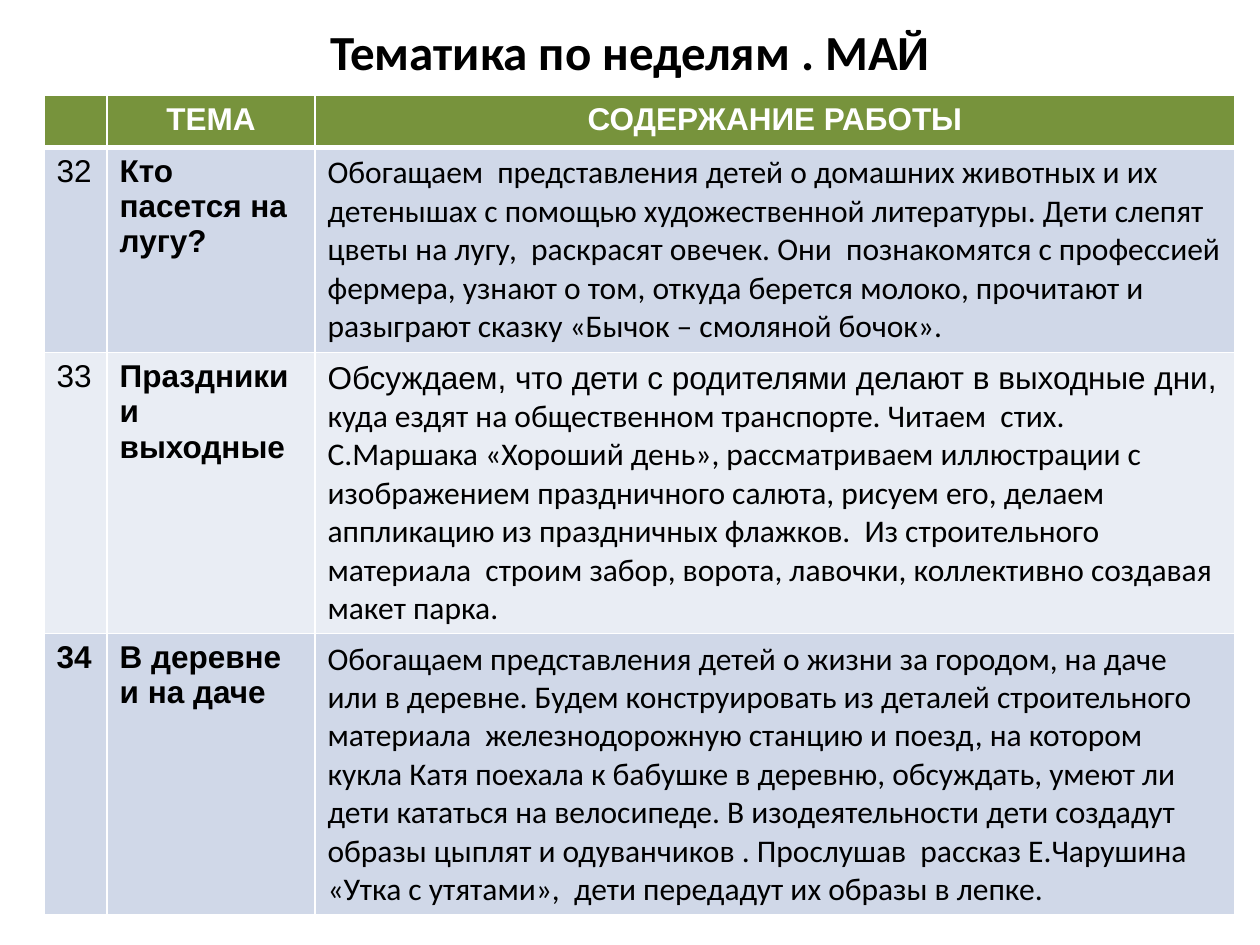
from dataclasses import dataclass

from lxml import etree
from pptx import Presentation
from pptx.dml.color import RGBColor
from pptx.enum.text import MSO_ANCHOR, PP_ALIGN
from pptx.oxml.ns import qn
from pptx.util import Inches, Pt

CENTER, LEFT = PP_ALIGN.CENTER, PP_ALIGN.LEFT
MIDDLE = MSO_ANCHOR.MIDDLE
BLANK_LAYOUT = 6


@dataclass(frozen=True)
class Theme:
    heading_font: str = "Calibri"
    label_font: str = "Arial"
    title_size: int = 28
    table_size: int = 18
    text: str = "000000"
    header_text: str = "FFFFFF"
    header_fill: str = "77933C"
    bands: tuple = ("D0D8E8", "E9EDF4")
    border: str = "FFFFFF"
    border_width: int = 1
    header_rule: int = 3


class SlideBuilder:
    def __init__(self, slide, theme):
        self.slide = slide
        self.theme = theme

    def format_span(self, span, size, font, color, bold):
        span.font.size = Pt(size)
        span.font.name = font
        span.font.bold = bold
        span.font.color.rgb = RGBColor.from_string(color)

    def title(self, text, left, top, width, height):
        box = self.slide.shapes.add_textbox(
            Inches(left), Inches(top), Inches(width), Inches(height))
        frame = box.text_frame
        frame.word_wrap = True
        frame.vertical_anchor = MIDDLE
        frame.text = text
        para = frame.paragraphs[0]
        para.alignment = CENTER
        self.format_span(para.runs[0], self.theme.title_size,
                         self.theme.heading_font, self.theme.text, True)

    def borders(self, cell, top, bottom):
        properties = cell._tc.get_or_add_tcPr()
        side = self.theme.border_width
        for tag, width in (("lnL", side), ("lnR", side),
                           ("lnT", top), ("lnB", bottom)):
            line = etree.SubElement(properties, qn(f"a:{tag}"), w=str(Pt(width)))
            fill = etree.SubElement(line, qn("a:solidFill"))
            etree.SubElement(fill, qn("a:srgbClr"), val=self.theme.border)

    def cell(self, cell, spans, fill, color, align=LEFT, top=1, bottom=1):
        """Fill a cell with spans given as (text, font, bold)."""
        self.borders(cell, top, bottom)
        cell.fill.solid()
        cell.fill.fore_color.rgb = RGBColor.from_string(fill)
        para = cell.text_frame.paragraphs[0]
        para.alignment = align
        for text, font, bold in spans:
            span = para.add_run()
            span.text = text
            self.format_span(span, self.theme.table_size, font, color, bold)

    def table(self, header, weeks, left, top, widths, heights):
        theme = self.theme
        table = self.slide.shapes.add_table(
            len(heights), len(widths), Inches(left), Inches(top),
            Inches(sum(widths)), Inches(sum(heights))).table
        for column, width in zip(table.columns, widths):
            column.width = Inches(width)
        for row, height in zip(table.rows, heights):
            row.height = Inches(height)

        # Header row
        for index, label in enumerate(header):
            spans = [(label, theme.label_font, True)] if label else []
            self.cell(table.cell(0, index), spans, theme.header_fill,
                      theme.header_text, CENTER, bottom=theme.header_rule)

        # One banded row per week
        for index, (number, number_bold, topic, lead, body) in enumerate(weeks):
            content = [(body, theme.heading_font, False)]
            if lead:
                content.insert(0, (lead, theme.label_font, False))
            row_spans = (
                [(number, theme.label_font, number_bold)],
                [(topic, theme.label_font, True)],
                content,
            )
            fill = theme.bands[index % len(theme.bands)]
            rule = theme.border_width if index else theme.header_rule
            for column, spans in enumerate(row_spans):
                self.cell(table.cell(index + 1, column), spans, fill,
                          theme.text, top=rule)


HEADER = ("", "ТЕМА", "СОДЕРЖАНИЕ РАБОТЫ")

# Number, bold number, topic, opening words in the label font, description
WEEKS = (
    ("32", False, "Кто пасется на лугу?", "",
     "Обогащаем  представления детей о домашних животных и их детенышах "
     "с помощью художественной литературы. Дети слепят цветы на лугу,  "
     "раскрасят овечек. Они  познакомятся с профессией фермера, узнают о том, "
     "откуда берется молоко, прочитают и разыграют сказку "
     "«Бычок – смоляной бочок»."),
    ("33", False, "Праздники и выходные",
     "Обсуждаем, что дети с родителями делают в выходные дни,",
     " куда ездят на общественном транспорте. Читаем  стих. С.Маршака "
     "«Хороший день», рассматриваем иллюстрации с изображением праздничного "
     "салюта, рисуем его, делаем аппликацию из праздничных флажков.  "
     "Из строительного материала  строим забор, ворота, лавочки, "
     "коллективно создавая макет парка."),
    ("34", True, "В деревне и на даче", "",
     "Обогащаем представления детей о жизни за городом, на даче или в деревне. "
     "Будем конструировать из деталей строительного материала  "
     "железнодорожную станцию и поезд, на котором кукла Катя поехала к бабушке "
     "в деревню, обсуждать, умеют ли дети кататься на велосипеде. "
     "В изодеятельности дети создадут образы цыплят и одуванчиков . "
     "Прослушав  рассказ Е.Чарушина «Утка с утятами»,  дети передадут "
     "их образы в лепке."),
)


def main():
    deck = Presentation()
    deck.slide_width, deck.slide_height = Inches(10), Inches(7.5)
    page = deck.slides.add_slide(deck.slide_layouts[BLANK_LAYOUT])
    builder = SlideBuilder(page, Theme())

    builder.title("Тематика по неделям . МАЙ", 0.5, 0.13, 9, 0.55)
    builder.table(HEADER, WEEKS, 0.35, 0.76,
                  widths=(0.5, 1.65, 7.3), heights=(0.41, 1.63, 2.23, 2.23))
    deck.save("out.pptx")


if __name__ == "__main__":
    main()
